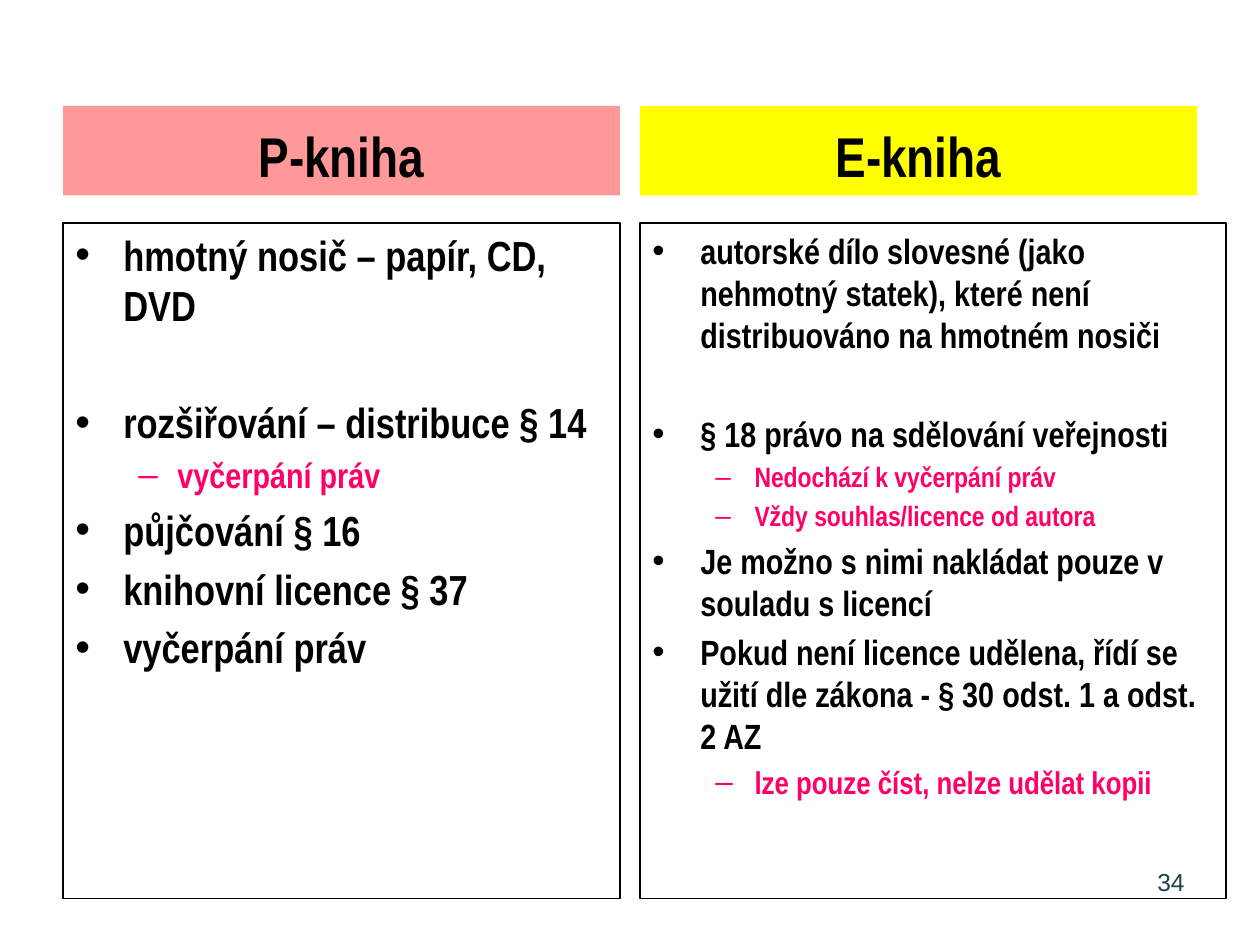
from pptx import Presentation, util as u
from pptx.dml.color import RGBColor
from pptx.enum import shapes, text
from pptx.oxml import parse_xml
from pptx.oxml.ns import nsdecls

COLORS = {"pink": "FF9999", "yellow": "FFFF00", "black": "000000",
          "accent": "FF0066", "number": "1B4445"}
BULLETS = [("•", 0.38, 0.38), ("–", 0.81, 0.31)]  # mark, margin, hanging

prs = Presentation()
prs.slide_width, prs.slide_height = u.Inches(10), u.Inches(7.5)
s = prs.slides.add_slide(prs.slide_layouts[6])


def add_box(left, top, width, height, fill=None, line=None):
    """Add a plain rectangle and return its wrapped, top-anchored text frame."""
    sp = s.shapes.add_shape(shapes.MSO_SHAPE.RECTANGLE,
                            *map(u.Inches, (left, top, width, height)))
    sp.shadow.inherit = False
    for part, color in ((sp.fill, fill), (sp.line.fill, line)):
        if color:
            part.solid()
            part.fore_color.rgb = RGBColor.from_string(COLORS[color])
        else:
            part.background()
    if line:
        sp.line.width = u.Pt(0.75)
    tf = sp.text_frame
    tf.word_wrap = True
    tf.vertical_anchor = text.MSO_ANCHOR.TOP
    return tf


def write(p, words, size, color="black", font="Arial Narrow", bold=True,
          align=text.PP_ALIGN.LEFT):
    """Fill a paragraph with one formatted run."""
    p.text = words
    p.alignment = align
    f = p.runs[0].font
    f.name, f.size, f.bold = font, u.Pt(size), bold
    f.color.rgb = RGBColor.from_string(COLORS[color])


# Each item: level, size, space before, words
columns = [
    ("P-kniha", "pink", 4.42, [
        (0, 24, 4.8, "hmotný nosič – papír, CD, DVD"),
        (0, 24, 38, "rozšiřování – distribuce § 14"),
        (1, 20, 4, "vyčerpání práv"),
        (0, 24, 4.8, "půjčování § 16"),
        (0, 24, 4.8, "knihovní licence § 37"),
        (0, 24, 4.8, "vyčerpání práv")]),
    ("E-kniha", "yellow", 4.65, [
        (0, 20, 4, "autorské dílo slovesné (jako nehmotný statek), "
                   "které není distribuováno na hmotném nosiči"),
        (0, 20, 32.5, "§ 18 právo na sdělování veřejnosti"),
        (1, 16, 3.2, "Nedochází k vyčerpání práv"),
        (1, 16, 3.2, "Vždy souhlas/licence od autora"),
        (0, 20, 4, "Je možno s nimi nakládat pouze v souladu s licencí"),
        (0, 20, 4, "Pokud není licence udělena, řídí se užití dle zákona "
                   "- § 30\u00a0odst. 1\u00a0a odst. 2\u00a0AZ"),
        (1, 18, 3.6, "lze pouze číst, nelze udělat kopii")]),
]

for col, (title, fill, width, items) in enumerate(columns):
    left = 0.5 + col * 4.58
    tf = add_box(left, 0.84, 4.42, 0.71, fill=fill)
    tf.vertical_anchor = text.MSO_ANCHOR.BOTTOM
    write(tf.paragraphs[0], title, 32, align=text.PP_ALIGN.CENTER)

    tf = add_box(left, 1.77, width, 5.36, line="black")
    for i, (level, size, before, words) in enumerate(items):
        p = tf.add_paragraph() if i else tf.paragraphs[0]
        write(p, words, size, "accent" if level else "black")
        p.level, p.space_before = level, u.Pt(before)
        mark, margin, hanging = BULLETS[level]
        pPr = p._p.get_or_add_pPr()
        pPr.set("marL", str(u.Inches(margin)))
        pPr.set("indent", str(-u.Inches(hanging)))
        pPr.append(parse_xml(f'<a:buFont {nsdecls("a")} typeface="Arial"/>'))
        pPr.append(parse_xml(f'<a:buChar {nsdecls("a")} char="{mark}"/>'))

number = s.shapes.add_textbox(*map(u.Inches, (7.17, 6.83, 2.33, 0.52)))
tf = number.text_frame
tf.word_wrap = True
write(tf.paragraphs[0], "34", 14, "number", "Arial", False, text.PP_ALIGN.RIGHT)

prs.save("out.pptx")
